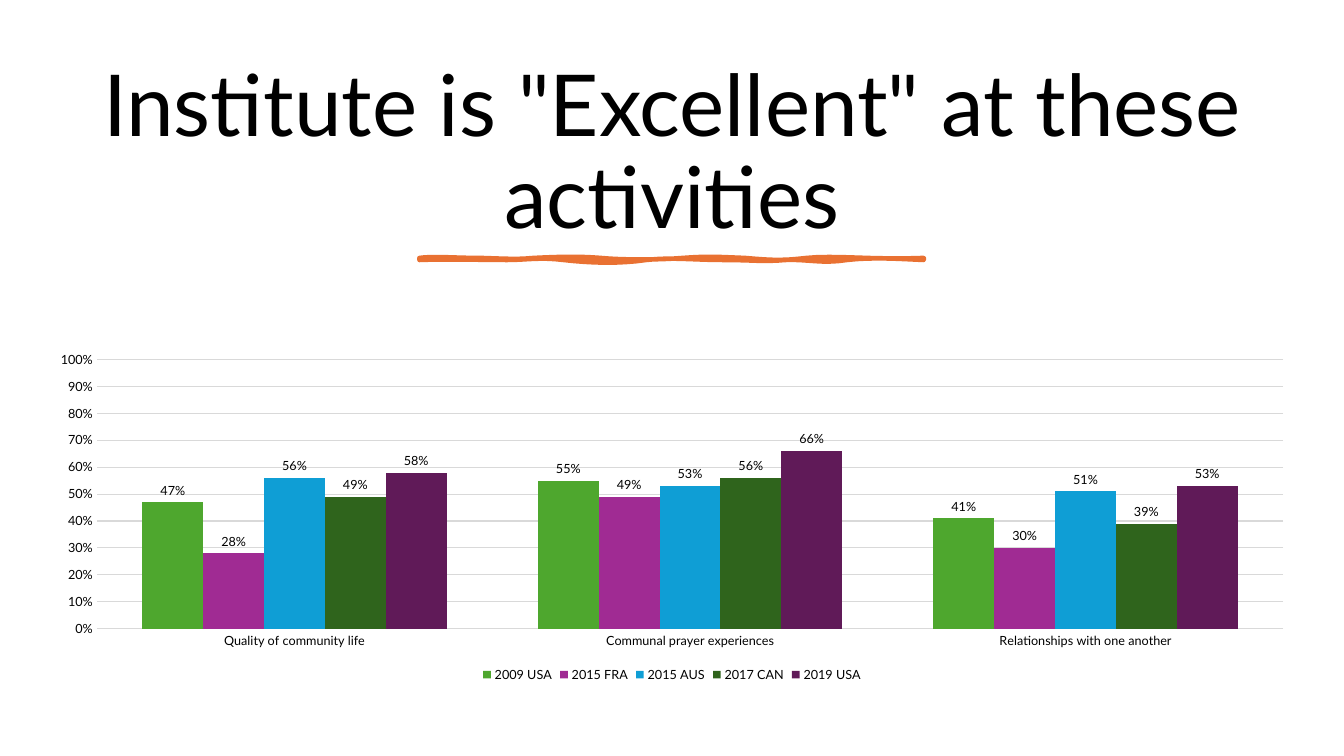
import dataclasses

import pptx
import pptx.chart.data
import pptx.dml.color
import pptx.enum.chart
import pptx.enum.text
import pptx.oxml
import pptx.oxml.ns
import pptx.util

PX = 9144  # EMU in one px, 100 px to the inch


@dataclasses.dataclass(frozen=True)
class Theme:
    font: str = "Lato"
    ink: str = "000000"
    grid: str = "D9D9D9"
    accent: str = "E97132"
    head: int = 61
    note: int = 9
    hair: float = 0.75
    brush: float = 3.25


@dataclasses.dataclass(frozen=True)
class Box:
    left: int
    top: int
    width: int
    height: int

    def emu(self) -> tuple:
        return tuple(side * PX for side in dataclasses.astuple(self))


@dataclasses.dataclass(frozen=True)
class Series:
    name: str
    color: str
    vals: tuple


THEME = Theme()
TITLE = Box(70, 50, 1193, 200)
CHART = Box(35, 342, 1263, 339)
CATS = ("Quality of community life", "Communal prayer experiences",
        "Relationships with one another")
SERIES = (
    Series("2009 USA", "4EA72E", (0.47, 0.55, 0.41)),
    Series("2015 FRA", "A02B93", (0.28, 0.49, 0.3)),
    Series("2015 AUS", "0F9ED5", (0.56, 0.53, 0.51)),
    Series("2017 CAN", "2F641C", (0.49, 0.56, 0.39)),
    Series("2019 USA", "601A58", (0.58, 0.66, 0.53)),
)

# Brush stroke: a start point, then two handles and an end per curve
STROKE = (
    (416, 256),
    (428, 254), (454, 256), (473, 256), (492, 256), (509, 258), (529, 256),
    (549, 255), (574, 254), (596, 256), (617, 258), (653, 258), (677, 256),
    (702, 254), (714, 255), (739, 256), (763, 258), (774, 259), (800, 256),
    (826, 253), (867, 258), (916, 256), (917, 257), (916, 257), (916, 258),
    (895, 257), (865, 255), (840, 258), (815, 262), (801, 257), (779, 258),
    (756, 260), (747, 258), (717, 258), (687, 258), (667, 255), (641, 258),
    (614, 262), (585, 261), (559, 258), (534, 255), (523, 258), (503, 258),
    (483, 258), (438, 257), (416, 258), (416, 258), (416, 257), (416, 256),
)


def rgb(code: str) -> pptx.dml.color.RGBColor:
    return pptx.dml.color.RGBColor.from_string(code)


def style(font, size: int) -> None:
    font.name = THEME.font
    font.size = pptx.util.Pt(size)
    font.color.rgb = rgb(THEME.ink)


def rule(line) -> None:
    line.color.rgb = rgb(THEME.grid)
    line.width = pptx.util.Pt(THEME.hair)


def curve(knots: tuple, steps: int = 8) -> list:
    """Points in EMU along a chain of cubic curves."""
    dots = []
    for i in range(0, len(knots) - 1, 3):
        for step in range(1, steps + 1):
            t = step / steps
            mix = ((1 - t) ** 3, 3 * t * (1 - t) ** 2, 3 * t * t * (1 - t), t ** 3)
            dots.append(tuple(
                round(PX * sum(m * knot[axis] for m, knot in zip(mix, knots[i:i + 4])))
                for axis in (0, 1)))
    return dots


def add_title(slide, text: str) -> None:
    title = slide.shapes.title
    title.left, title.top, title.width, title.height = TITLE.emu()
    frame = title.text_frame
    frame.text = text
    frame.word_wrap = True
    frame.auto_size = pptx.enum.text.MSO_AUTO_SIZE.NONE
    frame.vertical_anchor = pptx.enum.text.MSO_ANCHOR.BOTTOM
    para = frame.paragraphs[0]
    para.alignment = pptx.enum.text.PP_ALIGN.CENTER
    para.line_spacing = 0.9
    style(para.runs[0].font, THEME.head)


def add_stroke(slide) -> None:
    x, y = STROKE[0]
    pen = slide.shapes.build_freeform(x * PX, y * PX, scale=1.0)
    pen.add_line_segments(curve(STROKE), close=True)
    shape = pen.convert_to_shape()
    shape.shadow.inherit = False
    shape.fill.solid()
    shape.fill.fore_color.rgb = rgb(THEME.accent)
    shape.line.color.rgb = rgb(THEME.accent)
    shape.line.width = pptx.util.Pt(THEME.brush)
    # Round joins
    shape.line._get_or_add_ln().append(
        pptx.oxml.parse_xml("<a:round %s/>" % pptx.oxml.ns.nsdecls("a")))


def add_chart(slide) -> None:
    kinds = pptx.enum.chart
    data = pptx.chart.data.CategoryChartData(number_format="0%")
    data.categories = CATS
    for row in SERIES:
        data.add_series(row.name, row.vals)
    chart = slide.shapes.add_chart(
        kinds.XL_CHART_TYPE.COLUMN_CLUSTERED, *CHART.emu(), data).chart
    style(chart.font, THEME.note)
    chart.has_title = False

    # Legend
    chart.has_legend = True
    chart.legend.position = kinds.XL_LEGEND_POSITION.BOTTOM
    chart.legend.include_in_layout = False
    style(chart.legend.font, THEME.note)

    # Axes
    for axis in (chart.category_axis, chart.value_axis):
        axis.major_tick_mark = axis.minor_tick_mark = kinds.XL_TICK_MARK.NONE
        style(axis.tick_labels.font, THEME.note)
    rule(chart.category_axis.format.line)
    scale = chart.value_axis
    scale.minimum_scale, scale.maximum_scale, scale.major_unit = 0, 1, 0.1
    scale.format.line.fill.background()
    scale.has_major_gridlines = True
    rule(scale.major_gridlines.format.line)
    scale.tick_labels.number_format = "0%"
    scale.tick_labels.number_format_is_linked = False

    # Columns and their labels
    plot = chart.plots[0]
    plot.vary_by_categories = False
    plot.gap_width, plot.overlap = 150, 0
    for bar, row in zip(plot.series, SERIES):
        bar.format.fill.solid()
        bar.format.fill.fore_color.rgb = rgb(row.color)
        tags = bar.data_labels
        tags.show_value = True
        tags.position = kinds.XL_LABEL_POSITION.OUTSIDE_END
        tags.number_format = "0%"
        tags.number_format_is_linked = False
        style(tags.font, THEME.note)


def main() -> None:
    deck = pptx.Presentation()
    deck.slide_width, deck.slide_height = 1333 * PX, 750 * PX
    slide = deck.slides.add_slide(deck.slide_layouts[5])
    add_title(slide, 'Institute is "Excellent" at these activities')
    add_stroke(slide)
    add_chart(slide)
    deck.save("out.pptx")


if __name__ == "__main__":
    main()
